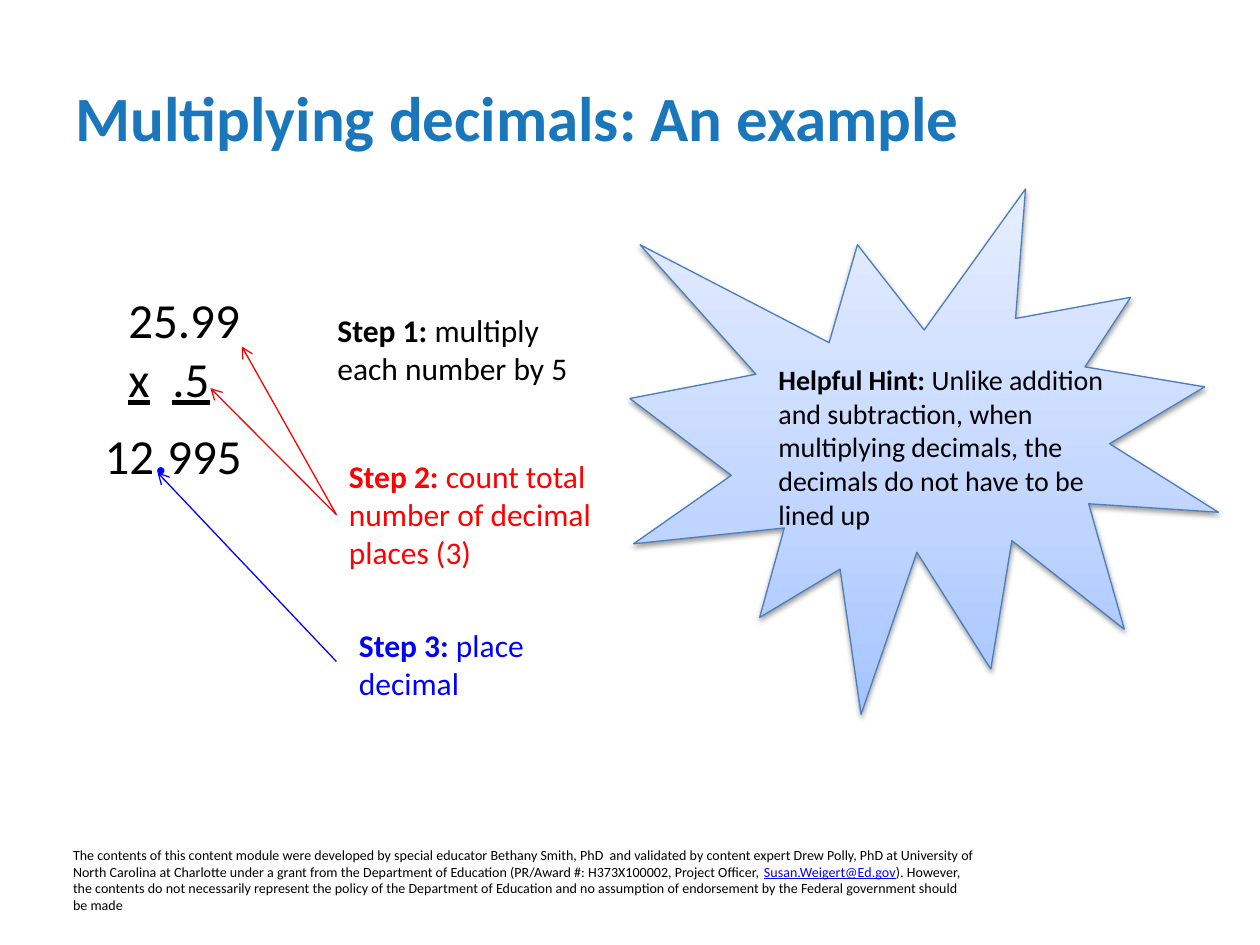
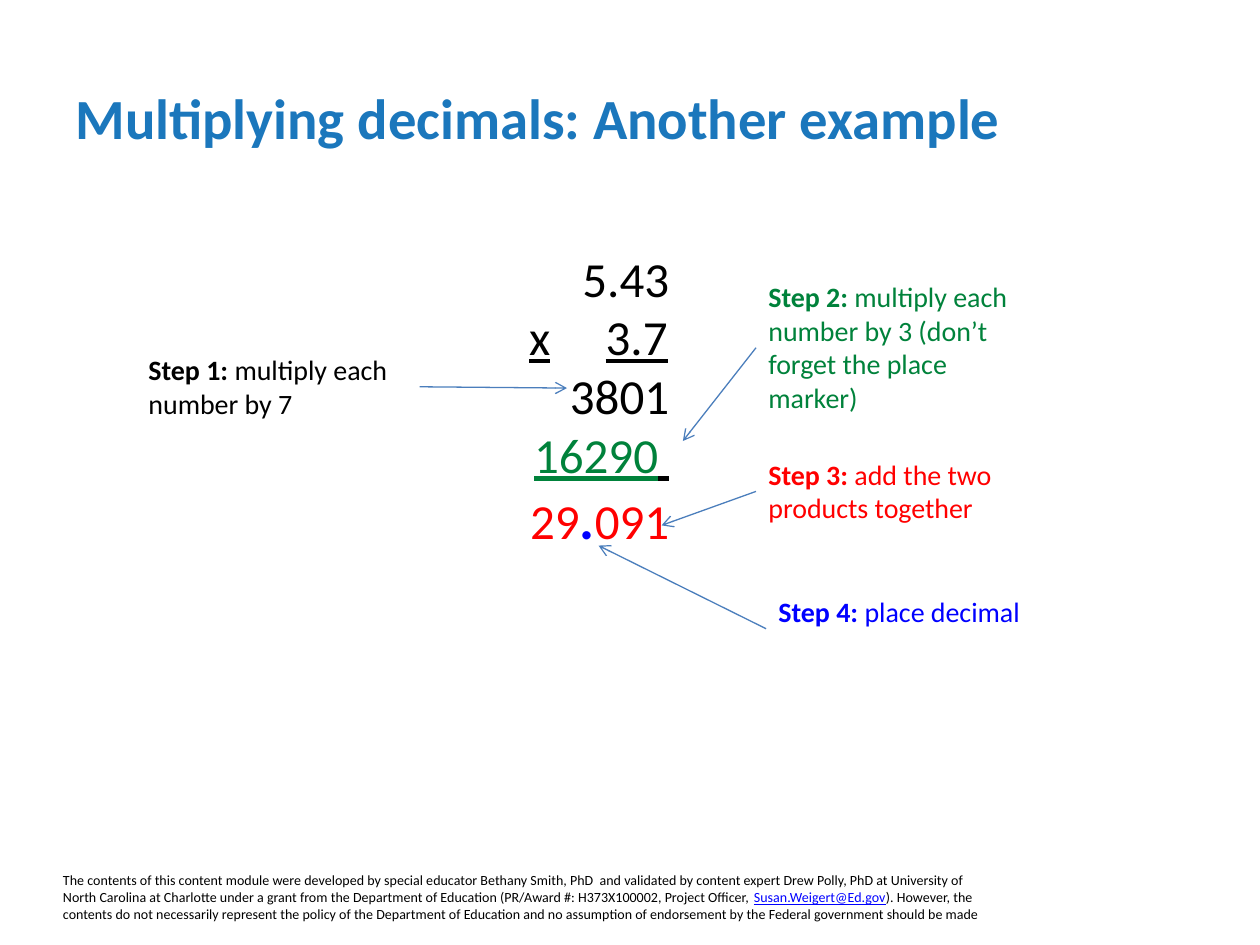
"""Build two slides that show how to multiply decimals."""
from pptx import Presentation
from pptx.dml.color import RGBColor
from pptx.enum.shapes import MSO_CONNECTOR, MSO_SHAPE
from pptx.enum.text import MSO_ANCHOR, MSO_AUTO_SIZE, PP_ALIGN
from pptx.oxml import parse_xml
from pptx.oxml.ns import nsdecls
from pptx.util import Inches, Pt

LEFT, MID, RIGHT = PP_ALIGN.LEFT, PP_ALIGN.CENTER, PP_ALIGN.RIGHT
TOP, CENTER, BOTTOM = MSO_ANCHOR.TOP, MSO_ANCHOR.MIDDLE, MSO_ANCHOR.BOTTOM
FIXED = MSO_AUTO_SIZE.NONE
STRAIGHT = MSO_CONNECTOR.STRAIGHT
BURST = MSO_SHAPE.EXPLOSION1
FONT = "Calibri"
COLORS = {
    "title": "1B77BC", "black": "000000", "red": "FF0000",
    "blue": "0000FF", "green": "00823B", "edge": "4B7EBC",
    "low": "A4C4FF", "half": "BFD4FF", "high": "E6EEFF",
}
WEST, EAST = 1, 3
PAD = (0.1, 0.05, 0.1, 0.05)

CREDIT = [
    ("The contents of this content module were developed by special educator "
     "Bethany Smith, PhD  and validated by content expert Drew Polly, PhD at "
     "University of North Carolina at Charlotte under a grant from the "
     "Department of Education (PR/Award #: H373X100002, Project Officer, ", "black", ""),
    ("Susan.Weigert@Ed.gov", "blue", "u"),
    ("). However, the contents do not necessarily represent the policy of the "
     "Department of Education and no assumption of endorsement by the Federal "
     "government should be made", "black", ""),
]

SLIDES = [
    {
        "title": ("Multiplying decimals: An example", 36),
        "credit": (0.58, 6.92, 7.17, 0.33),
        "burst": (5, 1.5, 4.67, 4.17),
        "size": 18,
        "steps": {
            1: ((2.58, 2.42, 2.25, 0.71), "black", "Step 1: ", "multiply each number by 5"),
            2: ((2.67, 3.58, 2.25, 1.01), "red", "Step 2: ",
                "count total number of decimal places (3)"),
            3: ((2.75, 4.92, 2.25, 0.71), "blue", "Step 3: ", "place decimal"),
        },
        "hint": ((6.08, 2.83, 2.83, 1.72), "black", "Helpful Hint: ",
                 "Unlike addition and subtraction, when multiplying decimals, "
                 "the decimals do not have to be lined up"),
        "sums": [
            ((0.92, 2.25, 3.08, 1.04), LEFT, PAD, [(0.35, "l"), (1.34, "l")],
             [[("25.99", "black", "")], [("x\t.5\t", "black", "u")]]),
            ((0.25, 3.33, 2.25, 0.57), MID, PAD, [],
             [[("12", "black", ""), (".", "blue", "b"), ("995", "black", "")]]),
        ],
        "arrows": [
            (2, WEST, (2.67, 4.09), (1.92, 2.75), "red"),
            (2, WEST, (2.67, 4.09), (1.67, 3.08), "red"),
            (3, None, (2.67, 5.25), (1.25, 3.75), "blue"),
        ],
    },
    {
        "title": ("Multiplying decimals: Another example", 32.4),
        "credit": (0.5, 6.92, 7.33, 0.4),
        "size": 16,
        "steps": {
            1: ((1.08, 2.75, 2.25, 0.64), "black", "Step 1: ", "multiply each number by 7"),
            2: ((6, 2.17, 2.25, 1.18), "green", "Step 2: ",
                "multiply each number by 3 (don’t forget the place marker)"),
            3: ((6, 3.58, 2.25, 0.64), "red", "Step 3: ", "add the two products together"),
            4: ((6.08, 4.67, 2.25, 0.64), "blue", "Step 4:", " place decimal"),
        },
        "sums": [
            ((4.08, 1.92, 1.33, 2.52), RIGHT, (0.12, 0.05, 0.1, 0.05), [(1.1, "r")],
             [[("5.43", "black", "")],
              [("x\t3.7", "black", "u")],
              [("3801", "black", "")],
              [("16290", "green", "u"), (" ", "black", "u")],
              [("29", "red", ""), (".", "blue", "b", 32), ("091", "red", "")]]),
        ],
        "arrows": [
            (1, EAST, (3.33, 3.07), (4.5, 3.08), "edge"),
            (2, WEST, (6, 2.76), (5.42, 3.5), "edge"),
            (4, WEST, (6.08, 4.99), (4.75, 4.33), "edge"),
            (3, WEST, (6, 3.9), (5.25, 4.17), "edge"),
        ],
    },
]


def rgb(name):
    return RGBColor.from_string(COLORS[name])


def inches(nums):
    return [Inches(n) for n in nums]


def add_run(para, size, text, color, style="", own=None):
    run = para.add_run()
    run.text = text
    font = run.font
    font.name, font.size = FONT, Pt(own or size)
    font.bold, font.underline = "b" in style, "u" in style
    font.color.rgb = rgb(color)


def set_tabs(para, tabs):
    stops = "".join(f'<a:tab pos="{Inches(at)}" algn="{side}"/>' for at, side in tabs)
    props = para._p.get_or_add_pPr()
    props.append(parse_xml(f'<a:tabLst {nsdecls("a")}>{stops}</a:tabLst>'))


def set_frame(frame, pad, anchor):
    frame.word_wrap = True
    frame.auto_size = FIXED
    frame.vertical_anchor = anchor
    (frame.margin_left, frame.margin_top,
     frame.margin_right, frame.margin_bottom) = inches(pad)


def add_text(slide, area, size, lines, align=LEFT, pad=PAD, anchor=TOP, tabs=()):
    box = slide.shapes.add_textbox(*inches(area))
    frame = box.text_frame
    set_frame(frame, pad, anchor)
    for i, runs in enumerate(lines):
        para = frame.add_paragraph() if i else frame.paragraphs[0]
        tabbed = any("\t" in run[0] for run in runs)
        para.alignment = LEFT if tabbed else align
        if tabbed:
            set_tabs(para, tabs)
        for run in runs:
            add_run(para, size, *run)
    return box


def add_note(slide, size, area, color, head, text):
    return add_text(slide, area, size, [[(head, color, "b"), (text, color)]])


def add_title(slide, text, size):
    title = slide.shapes.title
    title.left, title.top, title.width, title.height = inches((0.5, 0.3, 9, 1.25))
    set_frame(title.text_frame, PAD, CENTER)
    para = title.text_frame.paragraphs[0]
    para.alignment = LEFT
    add_run(para, size, text, "title", "b")


def add_burst(slide, area):
    burst = slide.shapes.add_shape(BURST, *inches(area))
    stops = "".join(
        f'<a:gs pos="{at * 1000}"><a:srgbClr val="{COLORS[name]}"/></a:gs>'
        for at, name in ((0, "low"), (35, "half"), (100, "high")))
    props = burst._element.spPr
    props.append(parse_xml(
        f'<a:gradFill {nsdecls("a")} rotWithShape="1"><a:gsLst>{stops}</a:gsLst>'
        '<a:lin ang="16200000" scaled="0"/></a:gradFill>'))
    burst.line.color.rgb = rgb("edge")
    burst.line.width = Pt(0.75)
    props.append(parse_xml(
        f'<a:effectLst {nsdecls("a")}><a:outerShdw blurRad="{Pt(3.1)}" '
        f'dist="{Pt(1.6)}" dir="5400000" rotWithShape="0">'
        f'<a:srgbClr val="{COLORS["black"]}"><a:alpha val="38000"/></a:srgbClr>'
        '</a:outerShdw></a:effectLst>'))


def add_arrow(slide, box, side, start, end, color):
    arrow = slide.shapes.add_connector(STRAIGHT, *inches(start + end))
    if side is not None:
        arrow.begin_connect(box, side)
    arrow.line.color.rgb = rgb(color)
    arrow.line.width = Pt(0.75)
    arrow.line._get_or_add_ln().append(
        parse_xml(f'<a:tailEnd {nsdecls("a")} type="arrow"/>'))
    arrow._element.spPr.append(parse_xml(f'<a:effectLst {nsdecls("a")}/>'))


def add_slide(deck, data):
    slide = deck.slides.add_slide(deck.slide_layouts[5])
    add_title(slide, *data["title"])
    if "burst" in data:
        add_burst(slide, data["burst"])
        add_note(slide, 16, *data["hint"])
    add_text(slide, data["credit"], 8, [CREDIT], pad=(0, 0, 0, 0), anchor=BOTTOM)
    for area, align, pad, tabs, lines in data["sums"]:
        add_text(slide, area, 28, lines, align, pad, tabs=tabs)
    boxes = {key: add_note(slide, data["size"], *step)
             for key, step in data["steps"].items()}
    for key, *rest in data["arrows"]:
        add_arrow(slide, boxes[key], *rest)


def main():
    deck = Presentation()
    deck.slide_width, deck.slide_height = inches((10, 7.5))
    for data in SLIDES:
        add_slide(deck, data)
    deck.save("out.pptx")


if __name__ == "__main__":
    main()
